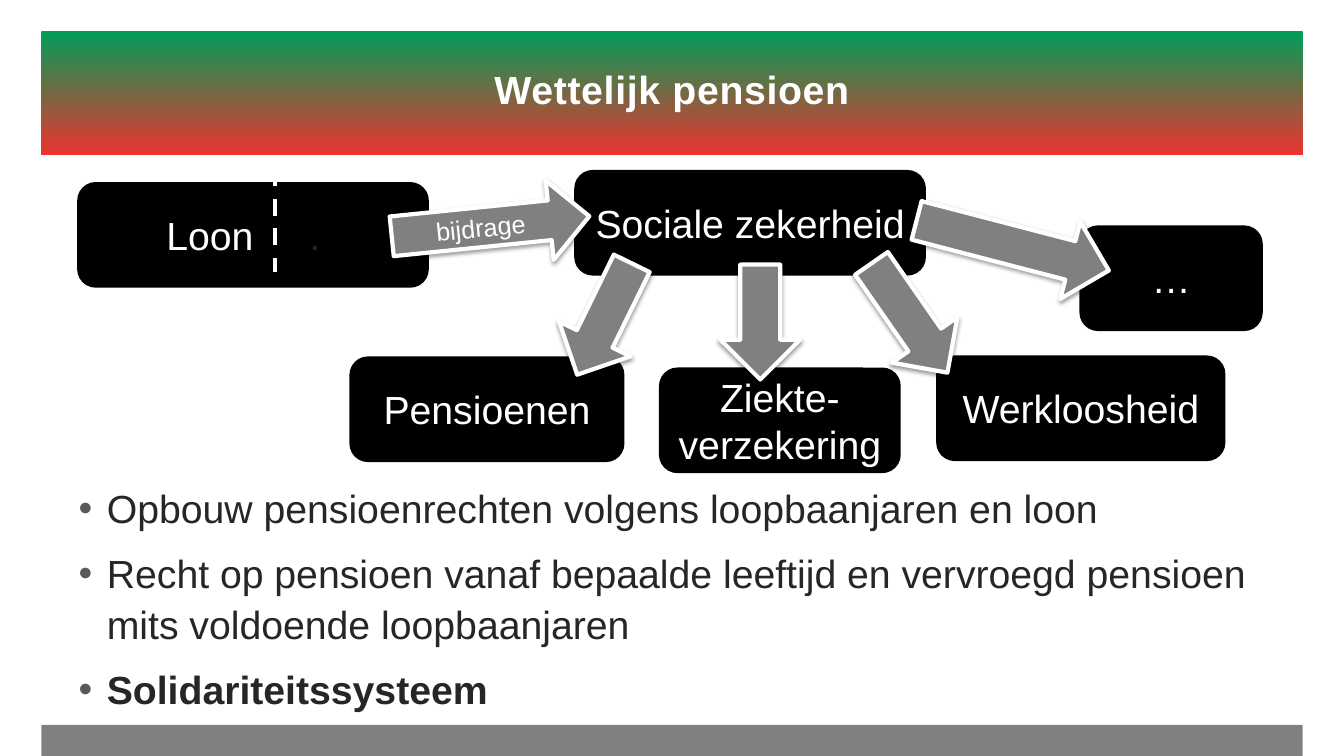
from lxml.etree import SubElement
from pptx import Presentation
from pptx.dml.color import RGBColor
from pptx.enum.dml import MSO_LINE
from pptx.enum.shapes import MSO_CONNECTOR, MSO_SHAPE
from pptx.enum.text import MSO_ANCHOR, PP_ALIGN
from pptx.oxml.ns import qn
from pptx.util import Inches, Pt

WHITE, BLACK, GRAY, DARK = "FFFFFF", "000000", "808080", "262626"
GREEN, RED, BULLET_GRAY = "009D58", "EC332E", "595959"
BOX_HEIGHT, ARROW_HEIGHT = 1.02, 0.79
BAND = (0.41, 0.31, 12.51, 1.23)

BOXES = [  # left, top, width, text
    (5.71, 1.7, 3.46, "Sociale zekerheid"),
    (3.48, 3.55, 2.7, "Pensioenen"),
    (6.55, 3.66, 2.37, "Ziekte-verzekering"),
    (9.3, 3.54, 2.84, "Werkloosheid"),
    (10.72, 2.25, 1.79, "…"),
]
ARROWS = [  # left, top, width, rotation, text
    (3.88, 1.85, 1.97, 354.2, "bijdrage"),
    (5.38, 2.77, 1.23, 116.1, ""),
    (6.97, 2.8, 1.14, 90, ""),
    (8.36, 2.76, 1.32, 55.2, ""),
    (9.06, 2.04, 1.97, 14.6, ""),
]
BULLETS = [  # text, bold
    ("Opbouw pensioenrechten volgens loopbaanjaren en loon", False),
    ("Recht op pensioen vanaf bepaalde leeftijd en vervroegd pensioen "
     "mits voldoende loopbaanjaren", False),
    ("Solidariteitssysteem", True),
]


def color(value):
    return RGBColor.from_string(value)


def add_run(paragraph, text, font_color=WHITE, size=28, bold=False):
    run = paragraph.add_run()
    run.text = text
    for name, value in {"name": "Arial", "size": Pt(size), "bold": bold}.items():
        setattr(run.font, name, value)
    run.font.color.rgb = color(font_color)
    return run


def add_panel(slide, kind, position, fill=None, line=None, width=0):
    shape = slide.shapes.add_shape(kind, *map(Inches, position))
    shape.shadow.inherit = False
    if fill:
        shape.fill.solid()
        shape.fill.fore_color.rgb = color(fill)
    if line:
        shape.line.color.rgb = color(line)
        shape.line.width = Pt(width)
    else:
        shape.line.fill.background()
    frame = shape.text_frame
    frame.word_wrap = True
    frame.vertical_anchor = MSO_ANCHOR.MIDDLE
    frame.paragraphs[0].alignment = PP_ALIGN.CENTER
    return shape


def add_title_band(slide):
    band = add_panel(slide, MSO_SHAPE.RECTANGLE, BAND)
    band.fill.gradient()
    band.fill.gradient_angle = 270
    for stop, position, value in zip(band.fill.gradient_stops, (0, 1), (GREEN, RED)):
        stop.position = position
        stop.color.rgb = color(value)


def add_text_area(slide, position):
    frame = slide.shapes.add_textbox(*map(Inches, position)).text_frame
    frame.word_wrap = True
    for side in ("left", "top", "right", "bottom"):
        setattr(frame, f"margin_{side}", 0)
    return frame


def add_title(slide, text):
    frame = add_text_area(slide, BAND)
    frame.vertical_anchor = MSO_ANCHOR.MIDDLE
    paragraph = frame.paragraphs[0]
    paragraph.alignment = PP_ALIGN.CENTER
    paragraph.line_spacing = Pt(28)
    run = add_run(paragraph, text, bold=True)
    run.font._element.set("spc", "50")


def add_box(slide, left, top, width, text=""):
    box = add_panel(slide, MSO_SHAPE.ROUNDED_RECTANGLE,
                    (left, top, width, BOX_HEIGHT), BLACK, BLACK, 2)
    if text:
        add_run(box.text_frame.paragraphs[0], text)
    return box


def add_wage_box(slide):
    """Wage box, with a dashed line that splits off the contribution."""
    frame = add_box(slide, 0.78, 1.82, 3.46).text_frame
    frame.margin_left = Inches(0.82)
    paragraph = frame.paragraphs[0]
    paragraph.alignment = PP_ALIGN.LEFT
    tabs = SubElement(paragraph._p.get_or_add_pPr(), qn("a:tabLst"))
    SubElement(tabs, qn("a:tab"), pos=str(Inches(1.42)), algn="l")
    add_run(paragraph, "Loon\t")
    add_run(paragraph, ".", DARK)

    divider = slide.shapes.add_connector(
        MSO_CONNECTOR.STRAIGHT, *map(Inches, (2.73, 1.68, 2.73, 2.7)))
    divider.line.color.rgb = color(WHITE)
    divider.line.width = Pt(3)
    divider.line.dash_style = MSO_LINE.DASH
    SubElement(divider._element.spPr, qn("a:effectLst"))


def add_arrow(slide, left, top, width, rotation, text):
    arrow = add_panel(slide, MSO_SHAPE.RIGHT_ARROW,
                      (left, top, width, ARROW_HEIGHT), GRAY, WHITE, 3)
    arrow.rotation = rotation
    effects = arrow._element.spPr.find(qn("a:effectLst"))
    shadow = SubElement(effects, qn("a:outerShdw"), blurRad=str(Pt(3.1)),
                        dist=str(Pt(1.6)), dir="5400000", rotWithShape="0")
    shade = SubElement(shadow, qn("a:srgbClr"), val=BLACK)
    SubElement(shade, qn("a:alpha"), val="38000")
    if text:
        add_run(arrow.text_frame.paragraphs[0], text, size=18)


def add_bullets(slide):
    frame = add_text_area(slide, (0.78, 4.77, 11.78, 2.33))
    for index, (text, bold) in enumerate(BULLETS):
        paragraph = frame.add_paragraph() if index else frame.paragraphs[0]
        paragraph.line_spacing = Pt(36.4)
        paragraph.space_before = Pt(10 if index else 0)
        properties = paragraph._p.get_or_add_pPr()
        properties.set("marL", str(Inches(0.28)))
        properties.set("indent", str(-Inches(0.28)))
        bullet_color = SubElement(properties, qn("a:buClr"))
        SubElement(bullet_color, qn("a:srgbClr"), val=BULLET_GRAY)
        SubElement(properties, qn("a:buFont"), typeface="Arial")
        SubElement(properties, qn("a:buChar"), char="•")
        add_run(paragraph, text, DARK, bold=bold)


def main():
    presentation = Presentation()
    presentation.slide_width = Inches(13.33)
    presentation.slide_height = Inches(7.5)
    slide = presentation.slides.add_slide(presentation.slide_layouts[6])
    add_title_band(slide)
    add_panel(slide, MSO_SHAPE.RECTANGLE, (0.41, 7.19, 12.51, 0.31), GRAY)
    add_title(slide, "Wettelijk pensioen")
    add_wage_box(slide)
    for box in BOXES:
        add_box(slide, *box)
    for arrow in ARROWS:
        add_arrow(slide, *arrow)
    add_bullets(slide)
    presentation.save("out.pptx")


if __name__ == "__main__":
    main()
